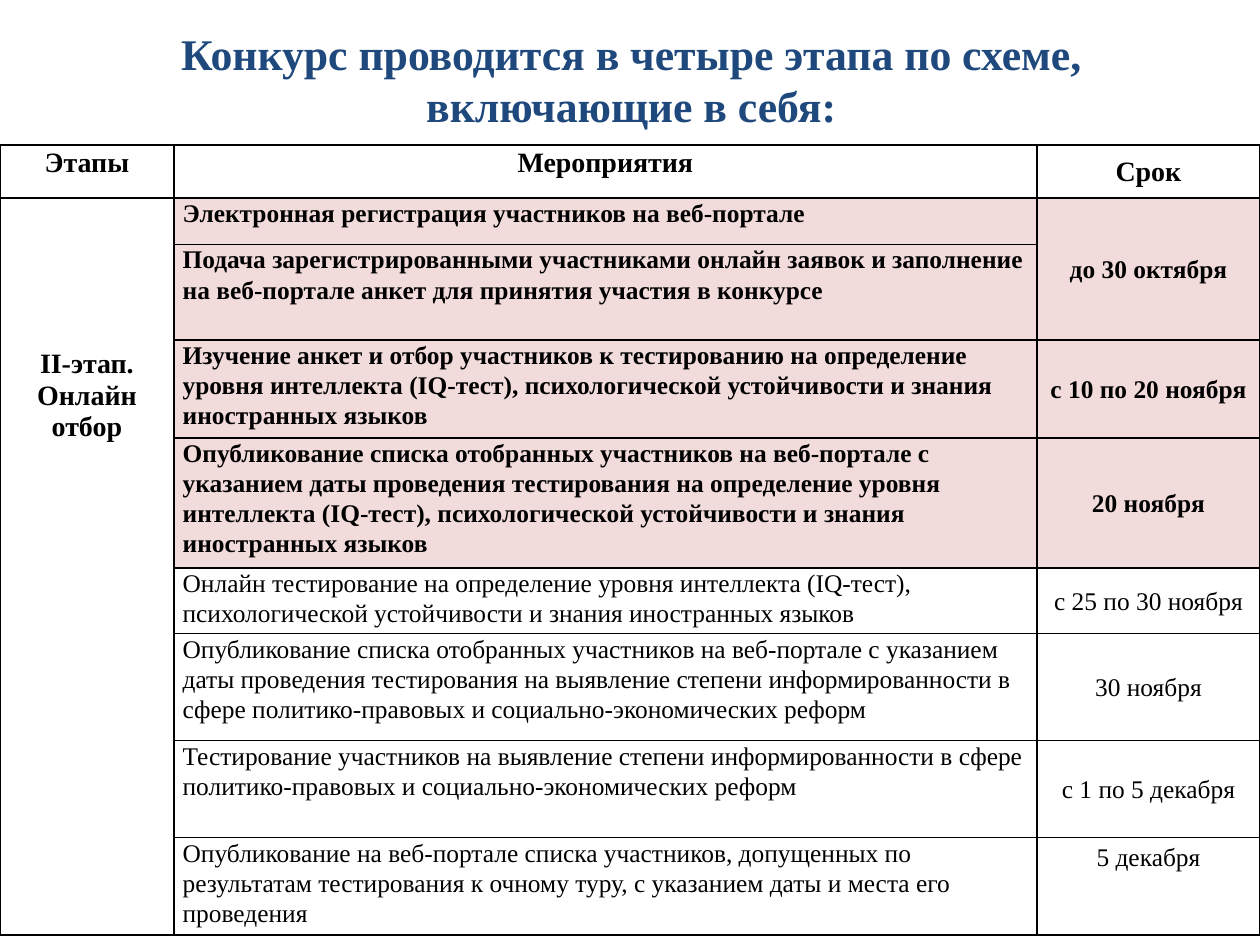
from lxml.etree import SubElement
from pptx import Presentation
from pptx.dml.color import RGBColor
from pptx.enum.text import MSO_ANCHOR, PP_ALIGN
from pptx.oxml.ns import qn
from pptx.util import Inches, Pt

FONT = "Times New Roman"
BLACK, BLUE, PINK = "000000", "1F497D", "F2DCDB"
COLS = [1.38, 6.85, 1.77]
ROWS = [0.42, 0.37, 0.76, 0.76, 1.02, 0.52, 0.85, 0.77, 0.77]
HEADS = ["Этапы", "Мероприятия", "Срок"]
# Event, date
EVENTS = [
    ("Электронная регистрация участников на веб-портале", "до 30 октября"),
    ("Подача зарегистрированными участниками онлайн заявок и заполнение "
     "на веб-портале анкет для принятия участия в конкурсе", None),
    ("Изучение анкет и отбор участников к тестированию на определение "
     "уровня интеллекта (IQ-тест), психологической устойчивости и знания "
     "иностранных языков", "с 10 по 20 ноября"),
    ("Опубликование списка отобранных участников на веб-портале с "
     "указанием даты проведения тестирования на определение уровня "
     "интеллекта (IQ-тест), психологической устойчивости и знания "
     "иностранных языков", "20 ноября"),
    ("Онлайн тестирование на определение уровня интеллекта (IQ-тест), "
     "психологической устойчивости и знания иностранных языков",
     "с 25 по 30 ноября"),
    ("Опубликование списка отобранных участников на веб-портале с указанием "
     "даты проведения тестирования на выявление степени информированности в "
     "сфере политико-правовых и социально-экономических реформ", "30 ноября"),
    ("Тестирование участников на выявление степени информированности в сфере "
     "политико-правовых и социально-экономических реформ",
     "с 1 по 5 декабря"),
    ("Опубликование на веб-портале списка участников, допущенных по "
     "результатам тестирования к очному туру, с указанием даты и места его "
     "проведения", "5 декабря"),
]
BOLD_ROWS = 4  # online selection steps set in bold on pink


def paint(target, color):
    target.solid()
    target.fore_color.rgb = RGBColor.from_string(color)


def write(frame, text, size, color=BLACK, bold=True,
          align=PP_ALIGN.CENTER, space=1.0):
    frame.text = text
    for para in frame.paragraphs:
        para.alignment = align
        para.line_spacing = space
        font = para.font
        font.name, font.size, font.bold = FONT, Pt(size), bold
        paint(font.fill, color)


def add_title(slide, text):
    box = slide.shapes.add_textbox(
        Inches(0.51), Inches(0), Inches(9), Inches(1.25))
    frame = box.text_frame
    frame.word_wrap = True
    frame.vertical_anchor = MSO_ANCHOR.MIDDLE
    write(frame, text, 25, BLUE)


def add_edges(cell):
    props = cell._tc.get_or_add_tcPr()
    for spot, side in enumerate(("lnL", "lnR", "lnT", "lnB")):
        line = props.makeelement(qn(f"a:{side}"), {"w": str(Pt(1))})
        fill = SubElement(line, qn("a:solidFill"))
        SubElement(fill, qn("a:srgbClr"), val=BLACK)
        props.insert(spot, line)


def fill_cell(cell, text, size, anchor=MSO_ANCHOR.TOP, space=1.07, **style):
    cell.margin_left = cell.margin_right = Inches(0.07)
    cell.margin_top = cell.margin_bottom = 0
    cell.vertical_anchor = anchor
    write(cell.text_frame, text, size, space=space, **style)


def add_grid(slide):
    table = slide.shapes.add_table(
        len(ROWS), len(COLS), Inches(0), Inches(1.15),
        Inches(sum(COLS)), Inches(sum(ROWS))).table
    for col, width in zip(table.columns, COLS):
        col.width = Inches(width)
    for row, height in zip(table.rows, ROWS):
        row.height = Inches(height)

    # Fills and borders
    for r in range(len(ROWS)):
        for c in range(len(COLS)):
            cell = table.cell(r, c)
            pink = c > 0 and 1 <= r <= BOLD_ROWS
            paint(cell.fill, PINK if pink else "FFFFFF")
            add_edges(cell)
    return table


def fill_grid(table):
    middle, last = MSO_ANCHOR.MIDDLE, len(EVENTS)

    # Header
    for c, head in enumerate(HEADS):
        fill_cell(table.cell(0, c), head, 16,
                  middle if c == 2 else MSO_ANCHOR.TOP)

    # Stage, merged down the first column
    stage = table.cell(1, 0)
    stage.merge(table.cell(last, 0))
    fill_cell(stage, "II-этап.\nОнлайн отбор", 16, space=1.0)
    stage.margin_left = stage.margin_right = Inches(0.1)
    stage.margin_top = Inches(1.2)

    # Events and dates
    table.cell(1, 2).merge(table.cell(2, 2))
    for r, (event, date) in enumerate(EVENTS, 1):
        bold = r <= BOLD_ROWS
        fill_cell(table.cell(r, 1), event, 14.5, bold=bold,
                  align=PP_ALIGN.LEFT)
        if date:
            fill_cell(table.cell(r, 2), date, 14.5, middle, bold=bold)
    end = table.cell(last, 2)
    end.vertical_anchor = MSO_ANCHOR.TOP
    end.margin_top = Inches(0.05)
    end.text_frame.paragraphs[0].line_spacing = 1.0


def main():
    deck = Presentation()
    deck.slide_width, deck.slide_height = Inches(10), Inches(7.5)
    slide = deck.slides.add_slide(deck.slide_layouts[6])
    add_title(slide, "Конкурс проводится в четыре этапа по схеме, "
                     "включающие в себя:")
    fill_grid(add_grid(slide))
    deck.save("out.pptx")


if __name__ == "__main__":
    main()
